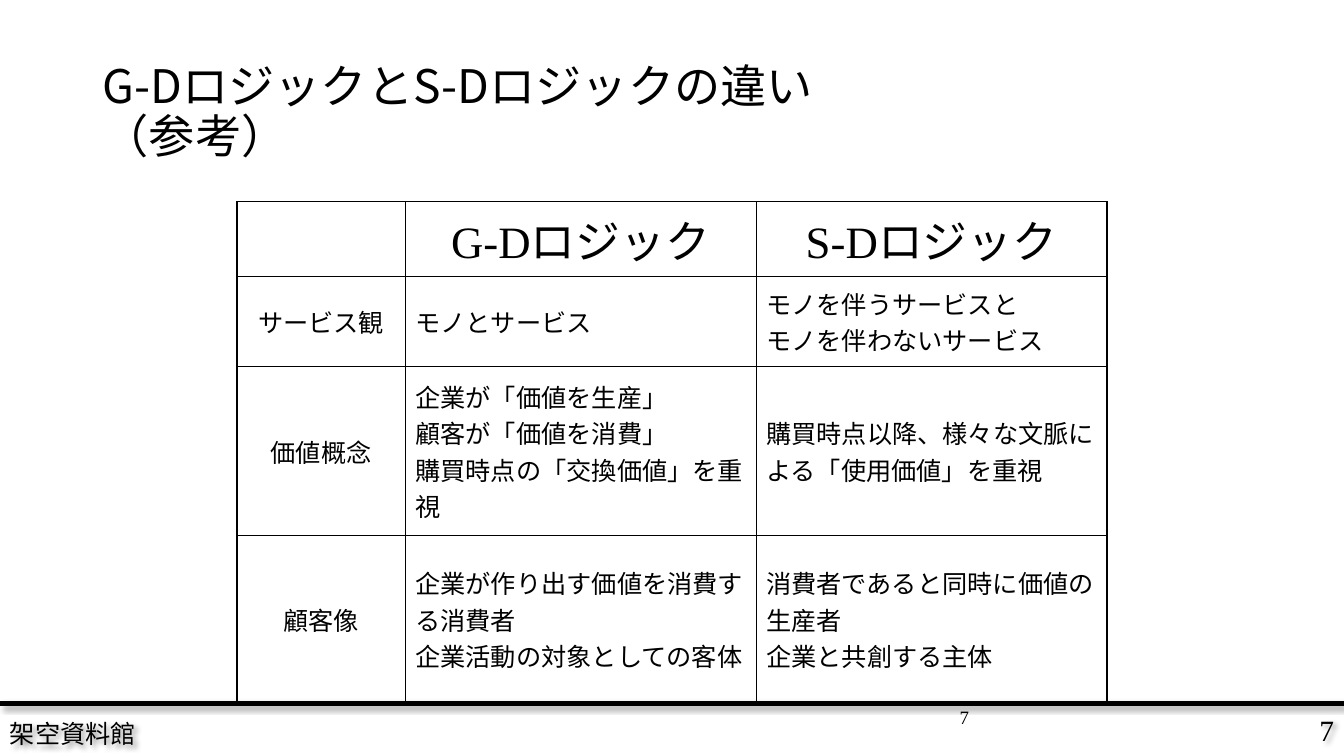
from lxml import etree
from pptx import Presentation
from pptx.dml.color import RGBColor
from pptx.enum import shapes, text
from pptx.oxml import ns
from pptx.util import Inches, Pt

BLACK = RGBColor(0x00, 0x00, 0x00)
SERIF = "Times New Roman"
GOTHIC = "Noto Sans CJK JP"
CENTER = text.PP_ALIGN.CENTER
LEFT = text.PP_ALIGN.LEFT
RIGHT = text.PP_ALIGN.RIGHT
MIDDLE = text.MSO_ANCHOR.MIDDLE
TOP = text.MSO_ANCHOR.TOP

COLUMN_WIDTHS = (1.67, 3.48, 3.48)
ROW_HEIGHTS = (0.74, 0.9, 1.67, 1.67)
COMPARISON = (
    ("", "G-Dロジック", "S-Dロジック"),
    ("サービス観", "モノとサービス", "モノを伴うサービスと\nモノを伴わないサービス"),
    ("価値概念",
     "企業が「価値を生産」\n顧客が「価値を消費」\n購買時点の「交換価値」を重視",
     "購買時点以降、様々な文脈による「使用価値」を重視"),
    ("顧客像",
     "企業が作り出す価値を消費する消費者\n企業活動の対象としての客体",
     "消費者であると同時に価値の生産者\n企業と共創する主体"),
)


def add_run(p, content, size, font):
    """Append one black run with Latin and East Asian fonts."""
    r = p.add_run()
    r.text = content
    r.font.size = Pt(size)
    r.font.name = font
    r.font.color.rgb = BLACK
    ea = etree.SubElement(r.font._element, ns.qn("a:ea"))
    ea.set("typeface", GOTHIC)


def add_shadow(sp):
    """Give a shape or connector a soft black shadow."""
    effects = etree.SubElement(sp._element.spPr, ns.qn("a:effectLst"))
    shadow = etree.SubElement(effects, ns.qn("a:outerShdw"), blurRad=str(Pt(4)),
                              dist=str(Pt(3)), dir="2700000", algn="tl", rotWithShape="0")
    color = etree.SubElement(shadow, ns.qn("a:srgbClr"), val=str(BLACK))
    etree.SubElement(color, ns.qn("a:alpha"), val="40000")


def add_text(slide, box, lines, size, font=SERIF, align=LEFT, anchor=MIDDLE):
    """Add a wrapped text box whose lines share one paragraph."""
    sp = slide.shapes.add_textbox(*(Inches(v) for v in box))
    tf = sp.text_frame
    tf.word_wrap = True
    tf.vertical_anchor = anchor
    p = tf.paragraphs[0]
    p.alignment = align
    for i, line in enumerate(lines):
        if i:
            p.add_line_break()
        add_run(p, line, size, font)
    return sp


def add_rule(slide, y):
    """Draw the footer rule across the slide."""
    line = slide.shapes.add_connector(
        shapes.MSO_CONNECTOR.STRAIGHT, 0, Inches(y), Inches(13.33), Inches(y))
    line.line.color.rgb = BLACK
    line.line.width = Pt(3)
    add_shadow(line)


def add_borders(cell):
    """Draw a thin black border on every side of a cell."""
    tc_pr = cell._tc.get_or_add_tcPr()
    for i, side in enumerate(("lnL", "lnR", "lnT", "lnB")):
        ln = etree.Element(ns.qn(f"a:{side}"), w=str(Pt(1)))
        fill = etree.SubElement(ln, ns.qn("a:solidFill"))
        etree.SubElement(fill, ns.qn("a:srgbClr"), val=str(BLACK))
        tc_pr.insert(i, ln)


def fill_cell(cell, content, size, align):
    """Write a cell with one paragraph per line."""
    cell.fill.background()
    cell.vertical_anchor = MIDDLE
    add_borders(cell)
    tf = cell.text_frame
    for i, line in enumerate(content.split("\n") if content else ()):
        p = tf.add_paragraph() if i else tf.paragraphs[0]
        p.alignment = align
        add_run(p, line, size, SERIF)


def add_comparison(slide, left, top):
    """Build the comparison table."""
    frame = slide.shapes.add_table(
        len(ROW_HEIGHTS), len(COLUMN_WIDTHS), Inches(left), Inches(top),
        Inches(sum(COLUMN_WIDTHS)), Inches(sum(ROW_HEIGHTS)))
    table = frame.table
    table.first_row = table.horz_banding = False
    for column, width in zip(table.columns, COLUMN_WIDTHS):
        column.width = Inches(width)
    for i, (row, height) in enumerate(zip(table.rows, ROW_HEIGHTS)):
        row.height = Inches(height)
        for j, content in enumerate(COMPARISON[i]):
            is_heading = i == 0 or j == 0
            fill_cell(table.cell(i, j), content, 18 if i else 32,
                      CENTER if is_heading else LEFT)


def main():
    """Build and save the slide."""
    prs = Presentation()
    prs.slide_width, prs.slide_height = Inches(13.33), Inches(7.5)
    slide = prs.slides.add_slide(prs.slide_layouts[6])
    add_shadow(add_text(slide, (11.55, 6.98, 1.78, 0.51), ["7"], 21, align=RIGHT))
    add_shadow(add_text(slide, (0, 7.05, 3.6, 0.45), ["架空資料館"], 18))
    add_rule(slide, 6.98)
    title = add_text(slide, (0.92, 0.4, 11.5, 1.45),
                     ["G-DロジックとS-Dロジックの違い", "（参考）"], 33, GOTHIC)
    title.text_frame.paragraphs[0].line_spacing = 0.9
    add_comparison(slide, 2.35, 2)
    add_text(slide, (9.42, 6.95, 2.25, 0.4), ["7"], 13.5, anchor=TOP)
    prs.save("out.pptx")


if __name__ == "__main__":
    main()
